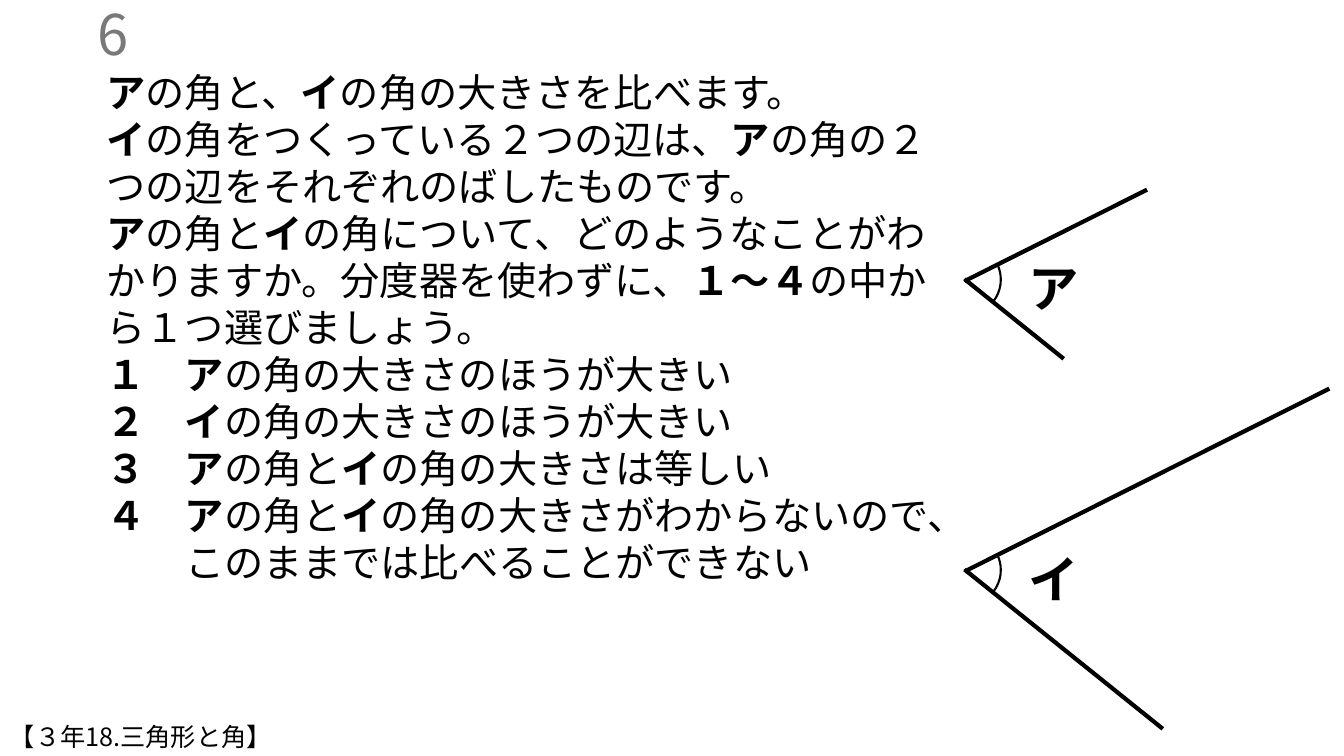
from lxml import etree
from pptx import Presentation
from pptx.dml.color import RGBColor
from pptx.enum.lang import MSO_LANGUAGE_ID
from pptx.enum.shapes import MSO_CONNECTOR, MSO_SHAPE
from pptx.enum.text import MSO_ANCHOR, PP_ALIGN
from pptx.oxml.ns import qn
from pptx.util import Pt

STRAIGHT = MSO_CONNECTOR.STRAIGHT
ARC = MSO_SHAPE.ARC
TOP, MIDDLE = MSO_ANCHOR.TOP, MSO_ANCHOR.MIDDLE
LEFT, RIGHT = PP_ALIGN.LEFT, PP_ALIGN.RIGHT
JAPANESE = MSO_LANGUAGE_ID.JAPANESE

FONT = "Noto Sans CJK JP"
BLACK, GRAY = "000000", "797979"
HANGING = 56

QUESTION = [
    "*ア*の角と、*イ*の角の大きさを比べます。",
    "*イ*の角をつくっている２つの辺は、*ア*の角の２つの辺をそれぞれのばしたものです。",
    "*ア*の角と*イ*の角について、どのようなことがわかりますか。"
    "分度器を使わずに、*１～４*の中から１つ選びましょう。",
    "*１　ア*の角の大きさのほうが大きい",
    "*２　イ*の角の大きさのほうが大きい",
    "*３　ア*の角と*イ*の角の大きさは等しい",
    "*４　ア*の角と*イ*の角の大きさがわからないので、このままでは比べることができない",
]


def color(hex_code):
    return RGBColor.from_string(hex_code)


def add_text(slide, box, paragraphs, size, ink=BLACK, align=LEFT, anchor=TOP,
             hanging_last=0):
    """Write paragraphs in which *asterisks* enclose bold words."""
    frame = slide.shapes.add_textbox(*map(Pt, box)).text_frame
    frame.word_wrap = True
    frame.vertical_anchor = anchor
    frame.margin_top = Pt(3.6 + 0.09 * size)
    for number, marked in enumerate(paragraphs):
        paragraph = frame.add_paragraph() if number else frame.paragraphs[0]
        paragraph.alignment = align
        paragraph.line_spacing = Pt(1.2 * size)
        properties = paragraph._p.get_or_add_pPr()
        properties.set("hangingPunct", "1")
        if hanging_last and number == len(paragraphs) - 1:
            properties.set("marL", str(Pt(hanging_last)))
            properties.set("indent", str(-Pt(hanging_last)))
        for part, words in enumerate(marked.split("*")):
            if not words:
                continue
            run = paragraph.add_run()
            run.text = words
            font = run.font
            font.size, font.name = Pt(size), FONT
            font.bold = part % 2 == 1
            font.color.rgb = color(ink)
            font.language_id = JAPANESE
            east_asian = etree.SubElement(font._element, qn("a:ea"))
            east_asian.set("typeface", FONT)


def add_side(slide, start, end):
    side = slide.shapes.add_connector(STRAIGHT, *map(Pt, (*start, *end)))
    side.line.color.rgb = color(BLACK)
    side.line.width = Pt(3)
    etree.SubElement(side._element.spPr, qn("a:effectLst"))


def add_angle(slide, x, y, name, scale):
    """Draw a named angle with its vertex at x, y and sides of the given scale."""
    upper, lower = y + 0.7, y - 0.7
    add_side(slide, (x, upper), (x + 130.3 * scale, upper - 65.3 * scale))
    add_side(slide, (x, lower), (x + 70.8 * scale, lower + 56.9 * scale))
    arc = slide.shapes.add_shape(
        ARC, Pt(x - 25.9), Pt(y - 25.9), Pt(51.8), Pt(51.1))
    arc.adjustments[0], arc.adjustments[1] = 201.04, 22
    arc.shadow.inherit = False
    arc.fill.background()
    arc.line.color.rgb = color(BLACK)
    arc.line.width = Pt(1.5)
    add_text(slide, (x + 38.9, y - 23, 46.1, 51.1), [f"*{name}*"], 36)


def build_question(slide):
    add_text(slide, (69.1, 42.5, 602.7, 380.2), QUESTION, 28,
             hanging_last=HANGING)
    add_text(slide, (-117.4, 7.2, 216, 28.8), ["6"], 40, ink=GRAY,
             align=RIGHT, anchor=MIDDLE)
    add_angle(slide, 689, 200.1, "ア", 1)
    add_angle(slide, 689, 407.5, "イ", 2)
    add_text(slide, (0, 509.8, 539.3, 28.8), ["【３年18.三角形と角】"], 18)


def main():
    deck = Presentation()
    deck.slide_width, deck.slide_height = Pt(960), Pt(540)
    build_question(deck.slides.add_slide(deck.slide_layouts[6]))
    deck.save("out.pptx")


if __name__ == "__main__":
    main()
